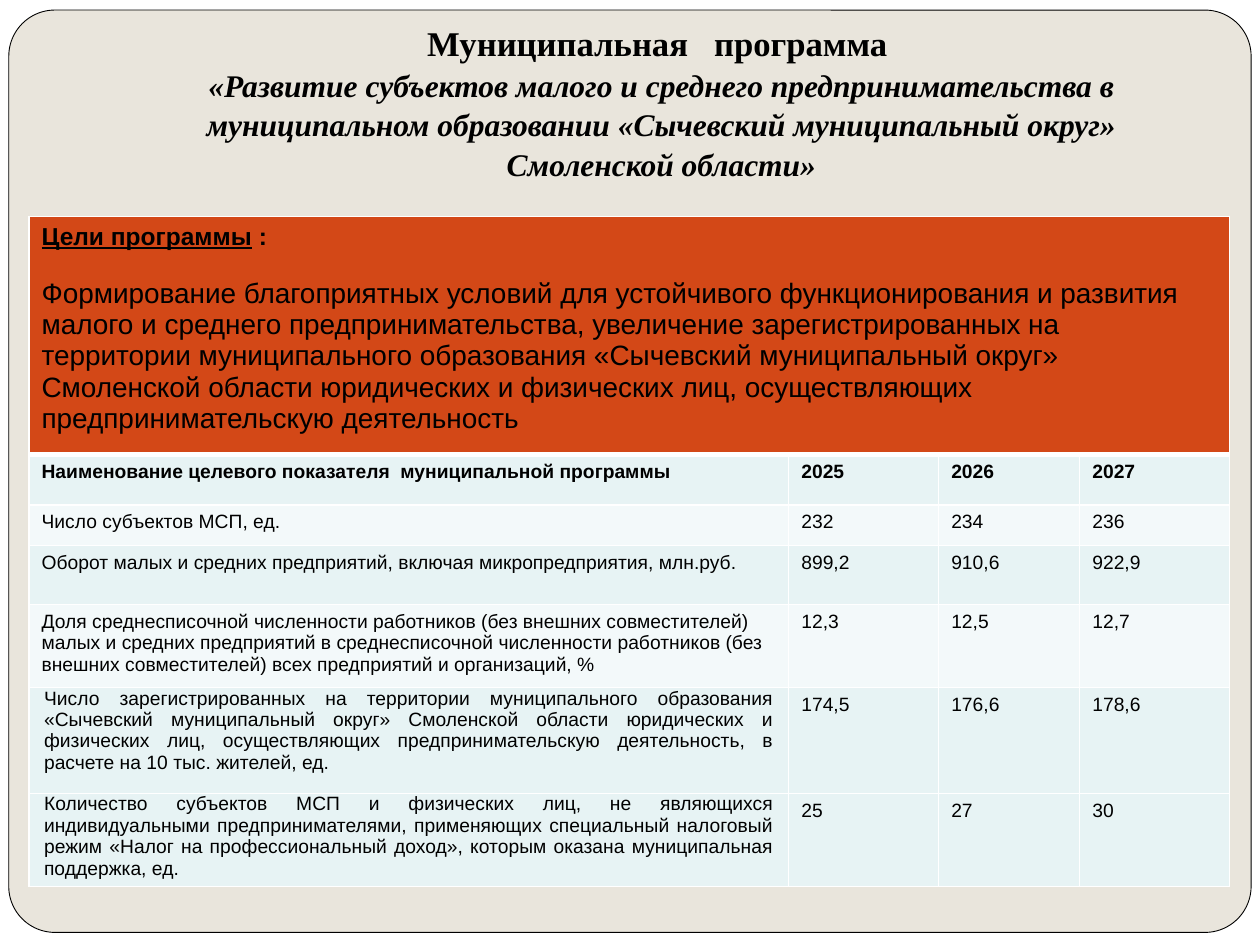
import pptx
import pptx.dml.color
import pptx.enum.shapes
import pptx.enum.text
import pptx.oxml
import pptx.oxml.ns
import pptx.util
from dataclasses import dataclass

Inches = pptx.util.Inches
Align = pptx.enum.text.PP_ALIGN


@dataclass(frozen=True)
class Theme:
    paper: str = "E9E5DC"
    white: str = "FFFFFF"
    ink: str = "000000"
    accent: str = "D34817"
    band_dark: str = "E7F3F4"
    band_light: str = "F3F9FA"
    title_font: str = "Times New Roman"
    body_font: str = "Arial"
    title_size: float = 19.8
    subtitle_size: float = 18
    goal_heading_size: float = 14
    goal_size: float = 16
    table_size: float = 11


theme = Theme()


def color(value):
    return pptx.dml.color.RGBColor.from_string(value)


def add_text(para, text, size=theme.table_size, font=theme.body_font,
             bold=False, italic=False, underline=False):
    span = para.add_run()
    span.text = text
    span.font.size = pptx.util.Pt(size)
    span.font.name = font
    span.font.bold = bold
    span.font.italic = italic
    span.font.underline = underline
    span.font.color.rgb = color(theme.ink)


deck = pptx.Presentation()
deck.slide_width = Inches(10)
deck.slide_height = Inches(7.5)
page = deck.slides.add_slide(deck.slide_layouts[6])

# Background and rounded panel
page.background.fill.solid()
page.background.fill.fore_color.rgb = color(theme.white)
panel = page.shapes.add_shape(
    pptx.enum.shapes.MSO_SHAPE.ROUNDED_RECTANGLE,
    Inches(0.07), Inches(0.08), Inches(9.86), Inches(7.32))
panel.adjustments[0] = 0.05
panel.shadow.inherit = False
panel.fill.solid()
panel.fill.fore_color.rgb = color(theme.paper)
panel.line.color.rgb = color(theme.ink)
panel.line.width = pptx.util.Pt(0.5)

# Title
box = page.shapes.add_textbox(Inches(1), Inches(0.3), Inches(8.5), Inches(1.25))
frame = box.text_frame
frame.word_wrap = True
frame.vertical_anchor = pptx.enum.text.MSO_ANCHOR.BOTTOM
frame.margin_bottom = Inches(0.1)
para = frame.paragraphs[0]
para.alignment = Align.CENTER
para.line_spacing = 1.05
add_text(para, "Муниципальная   программа ", size=theme.title_size,
         font=theme.title_font, bold=True)
para.add_line_break()
add_text(para, "«Развитие субъектов малого и среднего предпринимательства в "
         "муниципальном образовании «Сычевский муниципальный округ» "
         "Смоленской области»", size=theme.subtitle_size,
         font=theme.title_font, bold=True, italic=True)

# Table content: band fill, justified label, texts
rows = [
    (theme.band_dark, False,
     ["Наименование целевого показателя  муниципальной программы",
      "2025", "2026", "2027"]),
    (theme.band_light, False,
     ["Число субъектов МСП, ед.", "232", "234", "236"]),
    (theme.band_dark, False,
     ["Оборот малых и средних предприятий, включая микропредприятия, млн.руб.",
      "899,2", "910,6", "922,9"]),
    (theme.band_light, False,
     ["Доля среднесписочной численности работников (без внешних "
      "совместителей) малых и средних предприятий в среднесписочной "
      "численности работников (без внешних совместителей) всех предприятий "
      "и организаций, %", "12,3", "12,5", "12,7"]),
    (theme.band_dark, True,
     ["Число зарегистрированных на территории муниципального образования "
      "«Сычевский муниципальный округ» Смоленской области юридических и "
      "физических лиц, осуществляющих предпринимательскую деятельность, в "
      "расчете на 10 тыс. жителей, ед.", "174,5", "176,6", "178,6"]),
    (theme.band_dark, True,
     ["Количество субъектов МСП и физических лиц, не являющихся "
      "индивидуальными предпринимателями, применяющих специальный налоговый "
      "режим «Налог на профессиональный доход», которым оказана "
      "муниципальная поддержка, ед.", "25", "27", "30"]),
]
widths = [6.03, 1.19, 1.12, 1.19]
heights = [1.86, 0.4, 0.32, 0.47, 0.66, 0.84, 0.74]

# Table grid
table = page.shapes.add_table(
    len(heights), len(widths), Inches(0.23), Inches(1.72),
    Inches(sum(widths)), Inches(sum(heights))).table
for column, width in zip(table.columns, widths):
    column.width = Inches(width)
for row, height in zip(table.rows, heights):
    row.height = Inches(height)

# Programme goals across the top row
goals = table.cell(0, 0)
goals.merge(table.cell(0, len(widths) - 1))
para = goals.text_frame.paragraphs[0]
add_text(para, "Цели программы", size=theme.goal_heading_size,
         bold=True, underline=True)
add_text(para, " :", size=theme.goal_heading_size, bold=True)
para = goals.text_frame.add_paragraph()
para.space_before = pptx.util.Pt(16)
add_text(para, "Формирование благоприятных условий для устойчивого "
         "функционирования и развития малого и среднего предпринимательства, "
         "увеличение зарегистрированных на территории муниципального "
         "образования «Сычевский муниципальный округ» Смоленской области "
         "юридических и физических лиц, осуществляющих предпринимательскую "
         "деятельность", size=theme.goal_size)

# Indicators by year
for row_index, (band, justified, texts) in enumerate(rows, start=1):
    for column_index, text in enumerate(texts):
        cell = table.cell(row_index, column_index)
        para = cell.text_frame.paragraphs[0]
        add_text(para, text, bold=row_index == 1)
        if justified and column_index == 0:
            para.alignment = Align.JUSTIFY
            cell.margin_left = cell.margin_right = Inches(0.12)
            cell.margin_top = cell.margin_bottom = 0

# Cell borders and fills, with a thick rule under the goals
for row_index in range(len(heights)):
    for column_index in range(len(widths)):
        cell = table.cell(row_index, column_index)
        properties = cell._tc.get_or_add_tcPr()
        for side in ("L", "R", "T", "B"):
            thick = (row_index, side) in ((0, "B"), (1, "T"))
            line_width = pptx.util.Pt(3 if thick else 1)
            properties.append(pptx.oxml.parse_xml(
                f'<a:ln{side} {pptx.oxml.ns.nsdecls("a")} w="{line_width}">'
                f'<a:solidFill><a:srgbClr val="{theme.white}"/></a:solidFill>'
                f'</a:ln{side}>'))
        cell.fill.solid()
        cell.fill.fore_color.rgb = color(
            rows[row_index - 1][0] if row_index else theme.accent)

deck.save("out.pptx")
